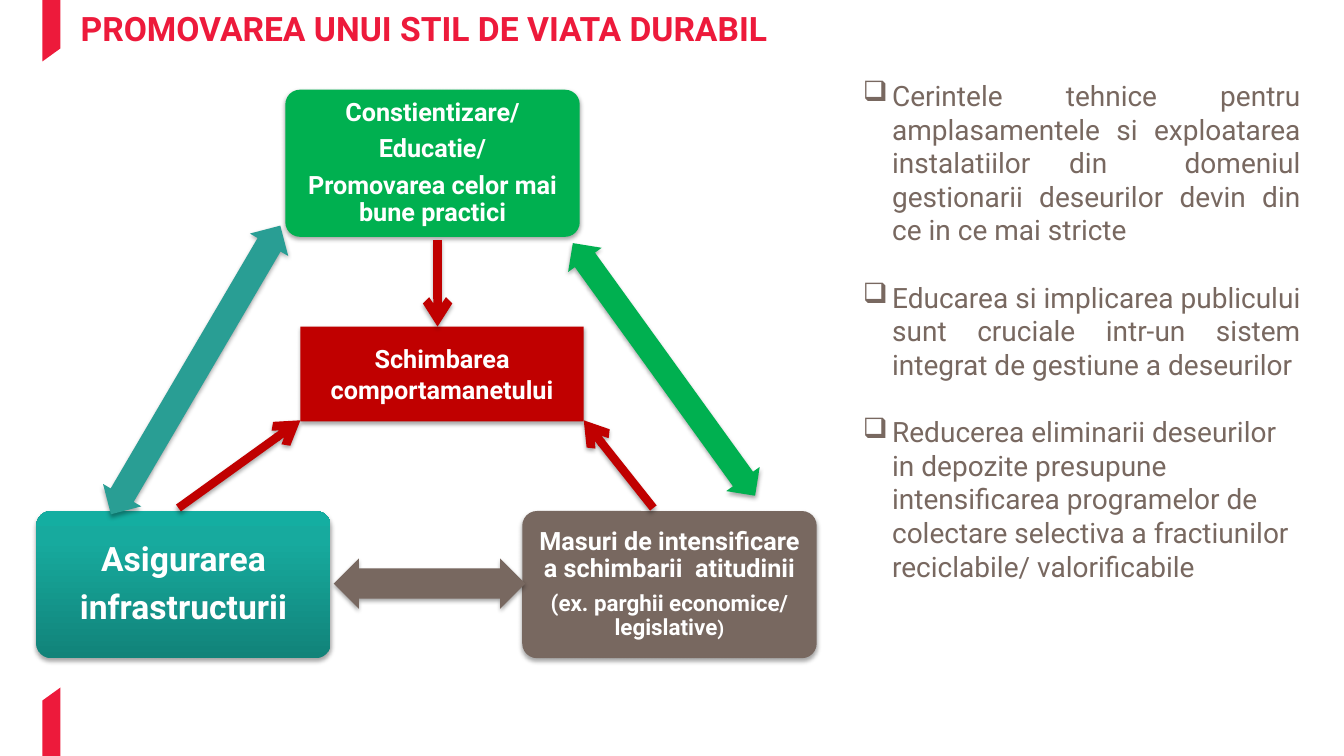
from copy import deepcopy

from lxml import etree
from pptx import Presentation
from pptx import util as u
from pptx.dml.color import RGBColor
from pptx.enum import shapes, text
from pptx.oxml.ns import qn

SCALE = 9144
FONT = "Roboto"
COLORS = {
    "red": "ED1A3B", "dark_red": "C00000", "green": "00B050", "brown": "786860",
    "teal": "299E94", "teal_low": "118379", "teal_mid": "17AA9E",
    "teal_high": "14AEA1", "white": "FFFFFF", "black": "000000",
}
NODE_SIZE = (292, 146)
BULLETS = [
    ("Cerintele tehnice pentru amplasamentele si exploatarea instalatiilor din  domeniul "
     "gestionarii deseurilor devin din ce in ce mai stricte", text.PP_ALIGN.JUSTIFY),
    ("Educarea si implicarea publicului sunt cruciale intr-un sistem integrat de gestiune "
     "a deseurilor", text.PP_ALIGN.JUSTIFY),
    ("Reducerea eliminarii deseurilor in depozite presupune intensificarea programelor de "
     "colectare selectiva a fractiunilor reciclabile/ valorificabile", text.PP_ALIGN.LEFT),
]


def px(*lengths):
    """Turn px lengths into EMU."""
    return [u.Emu(length * SCALE) for length in lengths]


def color(name):
    """Look up a colour by name."""
    return RGBColor.from_string(COLORS[name])


def style_font(paragraph, size, color_name, bold=False):
    """Set the font of a whole paragraph."""
    font = paragraph.font
    font.name, font.size, font.bold = FONT, u.Pt(size), bold
    font.color.rgb = color(color_name)


def add_shadow(effects):
    """Put a soft downward shadow into an effect list."""
    shadow = etree.SubElement(effects, qn("a:outerShdw"), blurRad="40000", dist="23000",
                              dir="5400000", rotWithShape="0")
    black = etree.SubElement(shadow, qn("a:srgbClr"), val=COLORS["black"])
    etree.SubElement(black, qn("a:alpha"), val="35000")


def add_block(slide, kind, box, fill, adjustments=()):
    """Add a filled, shadowed preset shape."""
    shape = slide.shapes.add_shape(kind, *px(*box))
    for index, value in enumerate(adjustments):
        shape.adjustments[index] = value
    shape.fill.solid()
    shape.fill.fore_color.rgb = color(fill)
    shape.line.fill.background()
    shape.shadow.inherit = False
    add_shadow(shape._element.spPr.find(qn("a:effectLst")))
    return shape


def write_centred(shape, lines, inset=None, line_spacing=0.9):
    """Write centred white (size, runs...) lines into a shape."""
    frame = shape.text_frame
    frame.word_wrap = True
    frame.vertical_anchor = text.MSO_ANCHOR.MIDDLE
    if inset is not None:
        frame.margin_left, frame.margin_top, frame.margin_right, frame.margin_bottom = px(*[inset] * 4)
    for index, (size, words) in enumerate(lines):
        paragraph = frame.paragraphs[0] if index == 0 else frame.add_paragraph()
        paragraph.text = words
        paragraph.alignment = text.PP_ALIGN.CENTER
        paragraph.line_spacing = line_spacing
        if index < len(lines) - 1:
            paragraph.space_after = u.Pt(round(size * 0.36, 1))
        style_font(paragraph, size, "white", bold=True)


def add_node(slide, left, top, fill, lines, inset=7):
    """Add one rounded corner box of the triangle."""
    node = add_block(slide, shapes.MSO_SHAPE.ROUNDED_RECTANGLE, (left, top, *NODE_SIZE), fill, [0.1])
    write_centred(node, lines, inset)
    return node


def fill_teal_gradient(shape):
    """Shade a shape from dark teal at the bottom to light teal at the top."""
    shape.fill.gradient()
    shape.fill.gradient_angle = 90
    stop_list = shape._element.spPr.find(qn("a:gradFill")).find(qn("a:gsLst"))
    stop_list.insert(1, deepcopy(stop_list[0]))
    for stop, (position, name) in zip(
            shape.fill.gradient_stops, [(0, "teal_low"), (0.8, "teal_mid"), (1, "teal_high")]):
        stop.position = position
        stop.color.rgb = color(name)


def add_pointer(slide, start, end):
    """Add a thick red arrow between two points."""
    pointer = slide.shapes.add_connector(shapes.MSO_CONNECTOR.STRAIGHT, *px(*start, *end))
    pointer.line.color.rgb = color("dark_red")
    pointer.line.width = u.Pt(6)
    properties = pointer._element.spPr
    etree.SubElement(properties.find(qn("a:ln")), qn("a:tailEnd"), type="arrow")
    add_shadow(etree.SubElement(properties, qn("a:effectLst")))


def add_diagram(slide, left, top):
    """Draw the triangle of measures around the change of behaviour."""
    double_arrow = shapes.MSO_SHAPE.LEFT_RIGHT_ARROW
    add_node(slide, left + 247, top, "green", [
        (18, "Constientizare/"), (18, "Educatie/"), (18, "Promovarea celor mai bune practici")])
    measures = add_node(slide, left + 482, top + 418, "brown", [
        (18, "Masuri de intensificare a schimbarii  atitudinii"),
        (16, "(ex. parghii economice/ legislative")])
    closing = measures.text_frame.paragraphs[-1].add_run()
    closing.text = ")"
    closing.font.size = u.Pt(14)
    infrastructure = add_node(slide, left, top + 418, "teal", [
        (24, "Asigurarea"), (24, "infrastructurii")], inset=10)
    fill_teal_gradient(infrastructure)

    for x, y, width, height, angle, fill in [
            (468, 257, 309, 41, 54.2, "green"),
            (295, 465, 190, 50, 0, "brown"),
            (-8, 256, 332, 44, 120.4, "teal")]:
        arrow = add_block(slide, double_arrow, (left + x, top + y, width, height), fill, [0.6, 0.5])
        arrow.rotation = angle

    goal = add_block(slide, shapes.MSO_SHAPE.RECTANGLE,
                     (left + 262, top + 235, 281, 94), "dark_red")
    write_centred(goal, [(18, "Schimbarea comportamanetului")], line_spacing=1)
    for start, end in [((398, 149), (398, 235)), ((141, 415), (262, 328)), ((612, 415), (543, 328))]:
        add_pointer(slide, (left + start[0], top + start[1]), (left + end[0], top + end[1]))


def add_ribbon(slide, points):
    """Draw one red ribbon end on the left edge."""
    builder = slide.shapes.build_freeform(*points[0], scale=SCALE)
    builder.add_line_segments(points[1:], close=True)
    ribbon = builder.convert_to_shape()
    ribbon.fill.solid()
    ribbon.fill.fore_color.rgb = color("red")
    ribbon.line.fill.background()
    ribbon.shadow.inherit = False


def add_title(slide, left, top, width, height):
    """Place and format the slide title."""
    title = slide.shapes.title
    title.left, title.top, title.width, title.height = px(left, top, width, height)
    frame = title.text_frame
    frame.text = "PROMOVAREA UNUI STIL DE VIATA DURABIL"
    frame.word_wrap = True
    frame.auto_size = text.MSO_AUTO_SIZE.NONE
    frame.vertical_anchor = text.MSO_ANCHOR.TOP
    frame.paragraphs[0].alignment = text.PP_ALIGN.LEFT
    style_font(frame.paragraphs[0], 24, "red", bold=True)


def add_bullets(slide, left, top, width, height):
    """Write the column of box-bulleted conclusions."""
    frame = slide.shapes.add_textbox(*px(left, top, width, height)).text_frame
    frame.word_wrap = True
    for index, (words, alignment) in enumerate(BULLETS):
        paragraph = frame.paragraphs[0] if index == 0 else frame.add_paragraph()
        paragraph.text = words
        paragraph.alignment = alignment
        if index > 0:
            paragraph.space_before = u.Pt(12)
        paragraph.space_after = u.Pt(12)
        properties = paragraph._p.get_or_add_pPr()
        properties.set("marL", str(29 * SCALE))
        properties.set("indent", str(-29 * SCALE))
        etree.SubElement(properties, qn("a:buChar"), char="❑")
        style_font(paragraph, 20, "brown")


def main():
    """Build and save the slide."""
    presentation = Presentation()
    presentation.slide_width, presentation.slide_height = px(1333, 750)
    slide = presentation.slides.add_slide(presentation.slide_layouts[5])
    add_ribbon(slide, [(60, 48), (60, 0), (42, 0), (42, 61)])
    add_ribbon(slide, [(42, 695), (42, 750), (60, 750), (60, 682)])
    add_diagram(slide, 36, 89)
    add_title(slide, 70, 3, 776, 51)
    add_bullets(slide, 846, 73, 454, 650)
    presentation.save("out.pptx")


if __name__ == "__main__":
    main()
